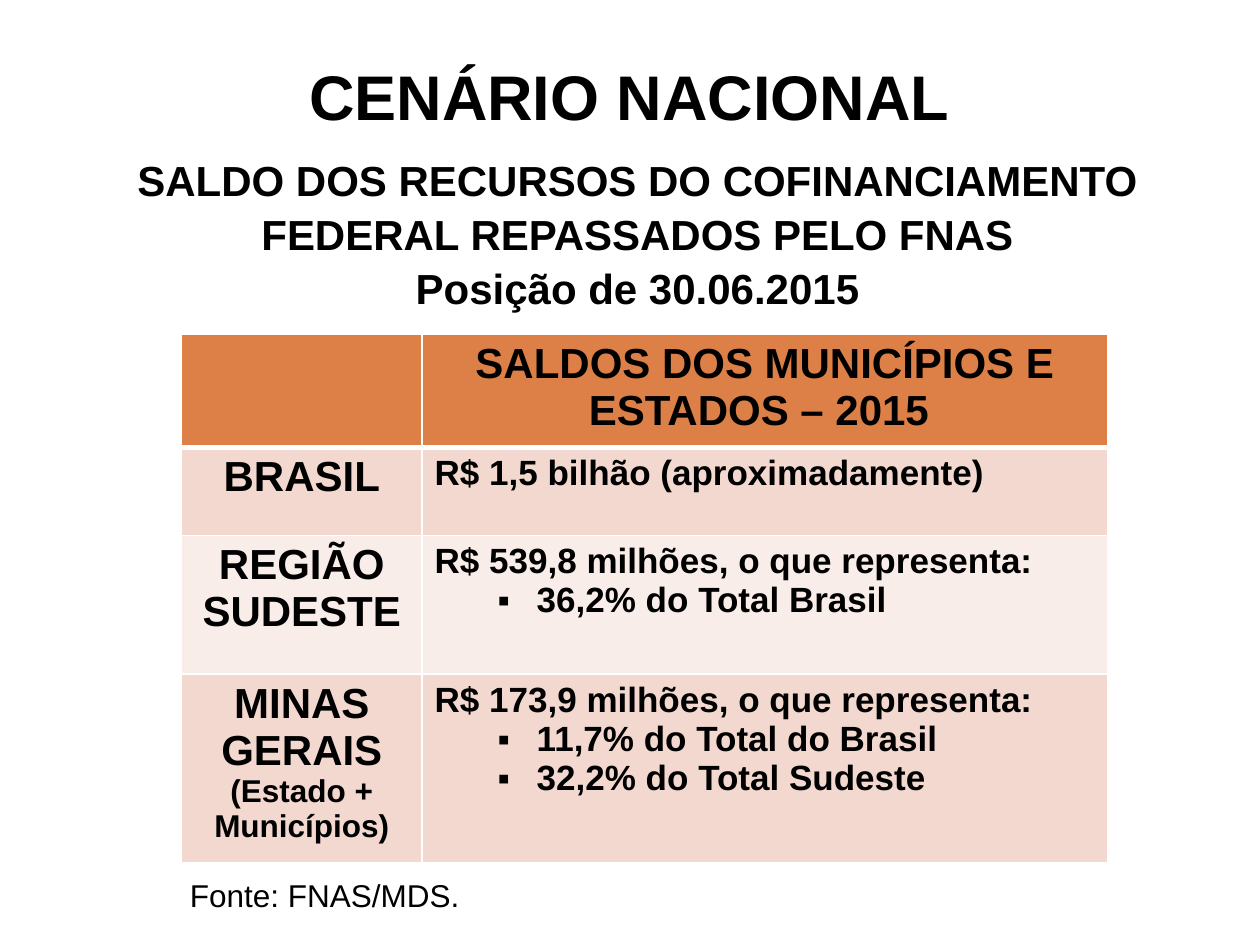
from dataclasses import dataclass

from lxml.etree import SubElement
from pptx import Presentation
from pptx.dml.color import RGBColor
from pptx.enum.text import MSO_AUTO_SIZE, PP_ALIGN
from pptx.oxml.ns import qn
from pptx.util import Inches, Pt


@dataclass(frozen=True)
class Theme:
    font: str = "Arial"
    text: str = "000000"
    header: str = "DD8047"
    band_dark: str = "F2D8CF"
    band_light: str = "F9EDE9"
    border: str = "FFFFFF"
    title: int = 36
    heading: int = 24
    body: int = 20
    small: int = 18


theme = Theme()


def add_run(paragraph, text, size, bold=True):
    run = paragraph.add_run()
    run.text = text
    run.font.name = theme.font
    run.font.size = Pt(size)
    run.font.bold = bold
    run.font.color.rgb = RGBColor.from_string(theme.text)


def set_borders(cell, bottom_width):
    """Draw all four cell borders; they must precede the fill in the XML."""
    properties = cell._tc.get_or_add_tcPr()
    for side, width in (("L", 1), ("R", 1), ("T", 1), ("B", bottom_width)):
        line = SubElement(properties, qn(f"a:ln{side}"), w=str(Pt(width)))
        fill = SubElement(line, qn("a:solidFill"))
        SubElement(fill, qn("a:srgbClr"), val=theme.border)


presentation = Presentation()
presentation.slide_width = Inches(10)
presentation.slide_height = Inches(7.5)
slide = presentation.slides.add_slide(presentation.slide_layouts[6])

# Title and subtitle
title_box = slide.shapes.add_textbox(Inches(0.53), Inches(0.36), Inches(9.06), Inches(2.05))
title_frame = title_box.text_frame
title_frame.word_wrap = True
title_frame.auto_size = MSO_AUTO_SIZE.SHAPE_TO_FIT_TEXT
title_lines = [
    ("CENÁRIO NACIONAL ", theme.title, 9.65),
    ("SALDO DOS RECURSOS DO COFINANCIAMENTO FEDERAL REPASSADOS PELO FNAS", theme.heading, 0),
    ("Posição de 30.06.2015", theme.heading, 0),
]
for index, (text, size, gap) in enumerate(title_lines):
    paragraph = title_frame.add_paragraph() if index else title_frame.paragraphs[0]
    paragraph.alignment = PP_ALIGN.CENTER
    paragraph.line_spacing = 1.08
    paragraph.space_after = Pt(gap)
    add_run(paragraph, text, size)

# Balance table: height, fill, label runs, value, bulleted shares
rows = [
    (0.89, theme.header, [], "SALDOS DOS MUNICÍPIOS E ESTADOS – 2015 ", []),
    (0.7, theme.band_dark, [("BRASIL", theme.heading)],
     "R$ 1,5 bilhão (aproximadamente)", []),
    (1.1, theme.band_light, [("REGIÃO SUDESTE", theme.heading)],
     "R$ 539,8 milhões, o que representa:", ["36,2% do Total Brasil"]),
    (1.5, theme.band_dark,
     [("MINAS GERAIS ", theme.heading), ("(Estado + Municípios)", theme.small)],
     "R$ 173,9 milhões, o que representa:",
     ["11,7% do Total do Brasil", "32,2% do Total Sudeste"]),
]
table = slide.shapes.add_table(
    len(rows), 2, Inches(1.44), Inches(2.65), Inches(7.35), Inches(4.19)).table
for column, width in zip(table.columns, (1.91, 5.44)):
    column.width = Inches(width)

for index, (height, color, label, value, shares) in enumerate(rows):
    is_header = index == 0
    table.rows[index].height = Inches(height)
    label_cell, value_cell = table.rows[index].cells
    for cell in (label_cell, value_cell):
        set_borders(cell, 3 if is_header else 1)
        cell.fill.solid()
        cell.fill.fore_color.rgb = RGBColor.from_string(color)

    paragraph = label_cell.text_frame.paragraphs[0]
    paragraph.alignment = PP_ALIGN.CENTER
    for text, size in label:
        add_run(paragraph, text, size)

    paragraph = value_cell.text_frame.paragraphs[0]
    paragraph.alignment = PP_ALIGN.CENTER if is_header else PP_ALIGN.LEFT
    add_run(paragraph, value, theme.heading if is_header else theme.body)
    for share in shares:
        paragraph = value_cell.text_frame.add_paragraph()
        paragraph.level = 1
        properties = paragraph._p.get_or_add_pPr()
        properties.set("marL", str(Inches(0.81)))
        properties.set("indent", str(Inches(-0.31)))
        SubElement(properties, qn("a:buFont"), typeface=theme.font)
        SubElement(properties, qn("a:buChar"), char="▪")
        add_run(paragraph, share, theme.body)

# Source note
source_box = slide.shapes.add_textbox(Inches(1.41), Inches(6.9), Inches(4.57), Inches(0.4))
source_box.text_frame.word_wrap = True
source_box.text_frame.auto_size = MSO_AUTO_SIZE.SHAPE_TO_FIT_TEXT
add_run(source_box.text_frame.paragraphs[0], "Fonte: FNAS/MDS.", theme.small, bold=False)

presentation.save("out.pptx")
